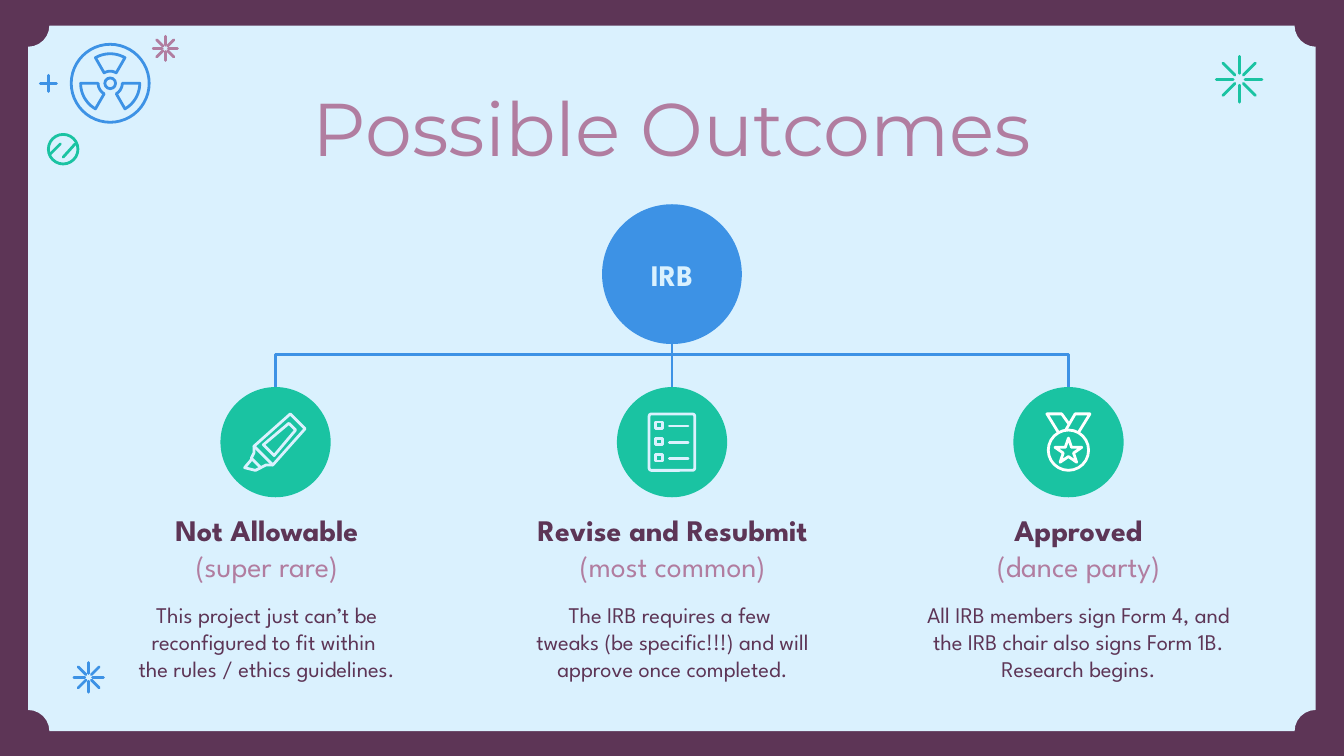
from dataclasses import dataclass
from math import cos, radians, sin

from lxml.etree import SubElement
from pptx import Presentation
from pptx.dml.color import RGBColor
from pptx.enum.shapes import MSO_CONNECTOR, MSO_SHAPE
from pptx.enum.text import MSO_ANCHOR, PP_ALIGN
from pptx.oxml.ns import qn
from pptx.util import Inches, Pt

PLUM = RGBColor(0x5D, 0x35, 0x56)
MAUVE = RGBColor(0xB1, 0x7D, 0xA0)
SKY = RGBColor(0xDA, 0xF1, 0xFE)
BLUE = RGBColor(0x3D, 0x92, 0xE5)
GREEN = RGBColor(0x1A, 0xC3, 0xA2)
WHITE = RGBColor(0xFF, 0xFF, 0xFF)
BODY_FONT = "League Spartan"
Point = tuple[float, float]


@dataclass
class Sparkle:
    center: Point
    radius: float
    color: RGBColor


@dataclass
class Outcome:
    heading: str
    frequency: str
    detail: str


SPARKLES = [
    Sparkle((1.23, 0.36), 0.09, MAUVE),
    Sparkle((0.66, 5.04), 0.11, BLUE),
    Sparkle((9.22, 0.59), 0.17, GREEN),
]
OUTCOMES = [
    Outcome("Not Allowable", "(super rare)",
            "This project just can’t be reconfigured to fit within \vthe rules / ethics guidelines."),
    Outcome("Revise and Resubmit", "(most common)",
            "The IRB requires a few \vtweaks (be specific!!!) and will approve once completed."),
    Outcome("Approved", "(dance party)",
            "All IRB members sign Form 4, and the IRB chair also signs Form 1B. Research begins."),
]
NODE_CENTERS = [2.05, 5, 7.95]
NODE_Y = 3.29
BRANCH_Y = 2.64


def polar(center: Point, radius: float, degrees: float) -> Point:
    angle = radians(degrees)
    return center[0] + radius * cos(angle), center[1] + radius * sin(angle)


def stroke(shape, color: RGBColor) -> None:
    shape.line.color.rgb = color
    shape.line.width = Pt(1.5)
    shape.element.spPr.find(qn("a:ln")).set("cap", "rnd")


def draw_line(page, start: Point, end: Point, color: RGBColor) -> None:
    line = page.shapes.add_connector(
        MSO_CONNECTOR.STRAIGHT, *(Inches(value) for value in (*start, *end)))
    stroke(line, color)
    SubElement(line.element.spPr, qn("a:effectLst"))


def draw_outline(page, points: list[Point], color: RGBColor, close: bool = True) -> None:
    corners = [(Inches(x), Inches(y)) for x, y in points]
    builder = page.shapes.build_freeform(*corners[0])
    builder.add_line_segments(corners[1:], close=close)
    outline = builder.convert_to_shape()
    outline.fill.background()
    outline.shadow.inherit = False
    stroke(outline, color)


def draw_shape(page, kind, box: tuple, fill: RGBColor | None = None,
               line: RGBColor | None = None):
    shape = page.shapes.add_shape(kind, *(Inches(value) for value in box))
    shape.shadow.inherit = False
    if fill is None:
        shape.fill.background()
    else:
        shape.fill.solid()
        shape.fill.fore_color.rgb = fill
    if line is None:
        shape.line.fill.background()
    else:
        stroke(shape, line)
    return shape


def draw_circle(page, center: Point, radius: float, fill: RGBColor | None = None,
                line: RGBColor | None = None):
    box = (center[0] - radius, center[1] - radius, 2 * radius, 2 * radius)
    return draw_shape(page, MSO_SHAPE.OVAL, box, fill, line)


def write(para, text: str, size: int, color: RGBColor, font: str = BODY_FONT,
          bold: bool = False) -> None:
    para.text = text
    para.alignment = PP_ALIGN.CENTER
    for span in para.runs:
        span.font.name = font
        span.font.size = Pt(size)
        span.font.bold = bold
        span.font.color.rgb = color


def add_text_frame(page, box: tuple):
    frame = page.shapes.add_textbox(*(Inches(value) for value in box)).text_frame
    frame.word_wrap = True
    frame.margin_top = frame.margin_bottom = Inches(0.1)
    return frame


def draw_sparkle(page, sparkle: Sparkle) -> None:
    for degrees in range(0, 360, 45):
        draw_line(page, polar(sparkle.center, sparkle.radius * 0.26, degrees),
                  polar(sparkle.center, sparkle.radius, degrees), sparkle.color)


def draw_corner_icons(page) -> None:
    center = (0.82, 0.62)
    for radius in (0.29, 0.04):
        draw_circle(page, center, radius, line=BLUE)
    for middle in (-90, 30, 150):
        sweep = range(middle - 30, middle + 31, 5)
        inner = [polar(center, 0.09, degrees) for degrees in sweep]
        outer = [polar(center, 0.22, degrees) for degrees in reversed(sweep)]
        draw_outline(page, inner + outer, BLUE)
    draw_circle(page, (0.47, 1.11), 0.11, line=GREEN)
    draw_line(page, (0.37, 1.15), (0.45, 1.07), GREEN)
    draw_line(page, (0.47, 1.17), (0.56, 1.07), GREEN)
    draw_line(page, (0.36, 0.56), (0.36, 0.68), BLUE)
    draw_line(page, (0.3, 0.62), (0.42, 0.62), BLUE)


def draw_highlighter(page) -> None:
    body = [(1.89, 3.32), (2.16, 3.08), (2.27, 3.19), (2.03, 3.46)]
    neck = [(1.89, 3.32), (1.89, 3.37), (1.87, 3.41), (1.94, 3.48), (1.98, 3.46), (2.03, 3.46)]
    tip = [(1.87, 3.42), (1.82, 3.48), (1.9, 3.5), (1.94, 3.48)]
    window = [(2.15, 3.15), (2.2, 3.2), (2.04, 3.39), (1.96, 3.31)]
    for points, close in ((body, True), (neck, False), (tip, False), (window, True)):
        draw_outline(page, points, SKY, close)


def draw_checklist(page) -> None:
    sheet = draw_shape(page, MSO_SHAPE.ROUNDED_RECTANGLE, (4.83, 3.08, 0.34, 0.42), line=SKY)
    sheet.adjustments[0] = 0.05
    for row in range(3):
        y = 3.17 + 0.12 * row
        draw_shape(page, MSO_SHAPE.RECTANGLE, (4.88, y - 0.03, 0.05, 0.05), line=SKY)
        draw_line(page, (4.98, y), (5.12, y), SKY)


def draw_medal(page) -> None:
    draw_circle(page, (7.95, 3.35), 0.15, line=WHITE)
    draw_shape(page, MSO_SHAPE.STAR_5_POINT, (7.85, 3.26, 0.2, 0.18), line=WHITE)
    draw_outline(page, [(7.87, 3.21), (7.79, 3.08), (7.9, 3.08), (7.95, 3.15)], WHITE, False)
    draw_outline(page, [(8.03, 3.21), (8.11, 3.08), (8, 3.08), (7.93, 3.2)], WHITE, False)


def draw_outcome(page, outcome: Outcome, left: float) -> None:
    frame = add_text_frame(page, (left, 3.71, 2.49, 0.91))
    write(frame.paragraphs[0], outcome.heading, 16, PLUM, bold=True)
    write(frame.add_paragraph(), outcome.frequency, 16, MAUVE)
    detail = frame.add_paragraph()
    write(detail, outcome.detail, 12, PLUM)
    detail.space_before = Pt(9.5)


def main() -> None:
    deck = Presentation()
    deck.slide_width = Inches(10)
    deck.slide_height = Inches(10) * 9 // 16
    page = deck.slides.add_slide(deck.slide_layouts[6])
    page.background.fill.solid()
    page.background.fill.fore_color.rgb = PLUM
    panel = draw_shape(page, MSO_SHAPE.PLAQUE, (0.21, 0.19, 9.58, 5.25), SKY)
    panel.adjustments[0] = 0.03
    draw_corner_icons(page)
    for sparkle in SPARKLES:
        draw_sparkle(page, sparkle)

    title = add_text_frame(page, (2.06, 0.67, 5.88, 0.55))
    title.vertical_anchor = MSO_ANCHOR.MIDDLE
    write(title.paragraphs[0], "Possible Outcomes", 40, MAUVE, "Montserrat")

    draw_line(page, (NODE_CENTERS[0], BRANCH_Y), (NODE_CENTERS[-1], BRANCH_Y), BLUE)
    for x in NODE_CENTERS:
        draw_line(page, (x, BRANCH_Y), (x, 2.96), BLUE)
        draw_circle(page, (x, NODE_Y), 0.41, GREEN)
    draw_line(page, (5, 2.39), (5, BRANCH_Y), BLUE)
    board = draw_circle(page, (5, 2.04), 0.52, BLUE)
    board.text_frame.vertical_anchor = MSO_ANCHOR.MIDDLE
    write(board.text_frame.paragraphs[0], "IRB", 16, SKY, bold=True)

    draw_highlighter(page)
    draw_checklist(page)
    draw_medal(page)
    for column, outcome in enumerate(OUTCOMES):
        draw_outcome(page, outcome, 0.74 + 3.02 * column)
    deck.save("out.pptx")


if __name__ == "__main__":
    main()
